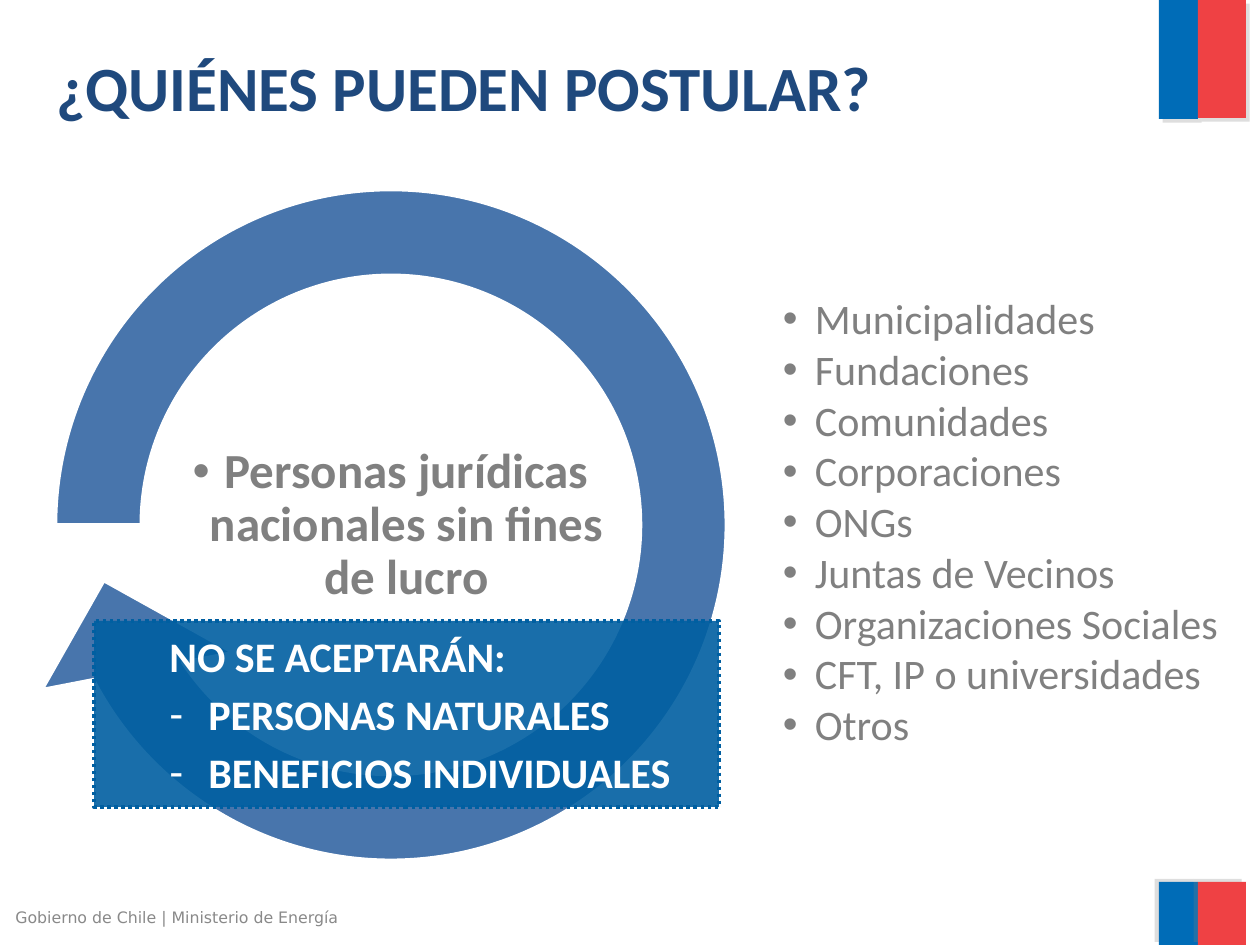
from dataclasses import dataclass

from lxml.etree import SubElement
from pptx import Presentation
from pptx.dml.color import RGBColor
from pptx.enum.dml import MSO_LINE
from pptx.enum.shapes import MSO_SHAPE
from pptx.enum.text import MSO_ANCHOR, PP_ALIGN
from pptx.oxml.ns import qn
from pptx.util import Emu, Pt

PX_PER_INCH = 126
BLUE, RED, NAVY = "006CB7", "EF4144", "1F497D"
RING_BLUE, NOTICE_BLUE = "4875AC", "005FA1"
GRAY, FOOTER_GRAY, SHADOW_GRAY, WHITE = "808080", "898989", "808080", "FFFFFF"


@dataclass(frozen=True)
class Box:
    left: int
    top: int
    width: int
    height: int


@dataclass(frozen=True)
class FlagBar:
    box: Box
    color: str
    shadow_angle: int


@dataclass(frozen=True)
class TextStyle:
    size: float
    color: str
    bold: bool = False
    font: str = "Calibri"
    align: PP_ALIGN = PP_ALIGN.LEFT
    line_spacing: float = 1.0
    before: float = 0
    after: float = 0


@dataclass(frozen=True)
class Line:
    text: str
    bullet: str = ""
    margin: int = 0
    indent: int = 0


FLAG_BARS = [
    FlagBar(Box(1159, -1, 39, 120), BLUE, 45),
    FlagBar(Box(1198, 0, 48, 118), RED, 45),
    FlagBar(Box(1159, 882, 39, 63), BLUE, 215),
    FlagBar(Box(1198, 882, 48, 63), RED, 215),
]
APPLICANTS = [
    "Municipalidades", "Fundaciones", "Comunidades", "Corporaciones", "ONGs",
    "Juntas de Vecinos", "Organizaciones Sociales", "CFT, IP o universidades",
    "Otros",
]
EXCLUDED = ["PERSONAS NATURALES", "BENEFICIOS INDIVIDUALES"]


def px(value: int) -> Emu:
    return Emu(round(value * 914400 / PX_PER_INCH))


def rgb(color: str) -> RGBColor:
    return RGBColor.from_string(color)


def place(box: Box) -> tuple[Emu, Emu, Emu, Emu]:
    return px(box.left), px(box.top), px(box.width), px(box.height)


def add_filled_shape(slide, preset: MSO_SHAPE, box: Box, fill: str):
    """Add a shape with a plain fill, no outline and no shadow."""
    shape = slide.shapes.add_shape(preset, *place(box))
    shape.shadow.inherit = False
    shape.fill.solid()
    shape.fill.fore_color.rgb = rgb(fill)
    shape.line.fill.background()
    return shape


def set_outline(shape, color: str) -> None:
    shape.line.color.rgb = rgb(color)
    shape.line.width = Pt(2)


def add_alpha(color_element, percent: int) -> None:
    SubElement(color_element, qn("a:alpha"), val=str(percent * 1000))


def add_flag_bar(slide, bar: FlagBar) -> None:
    shape = add_filled_shape(slide, MSO_SHAPE.RECTANGLE, bar.box, bar.color)
    effects = shape._element.spPr.find(qn("a:effectLst"))
    shadow = SubElement(effects, qn("a:outerShdw"), blurRad="0", dist=str(Pt(3)),
                        dir=str(bar.shadow_angle * 60000), algn="ctr", rotWithShape="0")
    add_alpha(SubElement(shadow, qn("a:srgbClr"), val=SHADOW_GRAY), 25)


def write_lines(shape, lines: list[Line], style: TextStyle, inset: int | None = None) -> None:
    frame = shape.text_frame
    frame.word_wrap = True
    frame.vertical_anchor = MSO_ANCHOR.MIDDLE
    if inset is not None:
        frame.margin_left = frame.margin_right = px(inset)
        frame.margin_top = frame.margin_bottom = px(inset)
    for index, line in enumerate(lines):
        paragraph = frame.add_paragraph() if index else frame.paragraphs[0]
        paragraph.text = line.text
        paragraph.alignment = style.align
        paragraph.line_spacing = style.line_spacing
        paragraph.space_before = Pt(style.before)
        paragraph.space_after = Pt(style.after)
        properties = paragraph._p.get_or_add_pPr()
        properties.set("marL", str(px(line.margin)))
        properties.set("indent", str(px(line.indent)))
        if line.bullet:
            SubElement(properties, qn("a:buFont"), typeface="Arial")
            SubElement(properties, qn("a:buChar"), char=line.bullet)
        font = paragraph.font
        font.name = style.font
        font.size = Pt(style.size)
        font.bold = style.bold
        font.color.rgb = rgb(style.color)


def add_text(slide, box: Box, lines: list[Line], style: TextStyle,
             inset: int | None = None) -> None:
    write_lines(slide.shapes.add_textbox(*place(box)), lines, style, inset)


def add_ring_arrow(slide) -> None:
    ring = add_filled_shape(slide, MSO_SHAPE.CIRCULAR_ARROW, Box(1, 135, 780, 780), RING_BLUE)
    for index, value in enumerate([0.11, 11.42, 90, 108, 0.125]):
        ring.adjustments[index] = value
    set_outline(ring, WHITE)


def add_exclusion_notice(slide) -> None:
    notice = add_filled_shape(slide, MSO_SHAPE.RECTANGLE, Box(94, 621, 625, 186), NOTICE_BLUE)
    add_alpha(notice._element.spPr.find(qn("a:solidFill")).find(qn("a:srgbClr")), 90)
    set_outline(notice, NOTICE_BLUE)
    notice.line.dash_style = MSO_LINE.ROUND_DOT
    lines = [Line("NO SE ACEPTARÁN:", margin=63)]
    lines += [Line(text, "-", 102, -39) for text in EXCLUDED]
    write_lines(notice, lines, TextStyle(24, WHITE, bold=True, before=4.4))


def main() -> None:
    presentation = Presentation()
    presentation.slide_width, presentation.slide_height = px(1260), px(945)
    slide = presentation.slides.add_slide(presentation.slide_layouts[6])

    for bar in FLAG_BARS:
        add_flag_bar(slide, bar)
    add_text(slide, Box(3, 900, 399, 34), [Line("Gobierno de Chile | Ministerio de Energía")],
             TextStyle(9, FOOTER_GRAY, font="DejaVu Sans"))
    add_text(slide, Box(44, 8, 1125, 157), [Line("¿QUIÉNES PUEDEN POSTULAR?")],
             TextStyle(36, NAVY, bold=True))
    add_ring_arrow(slide)
    add_text(slide, Box(781, 368, 467, 312),
             [Line(text, "•", 32, -32) for text in APPLICANTS],
             TextStyle(24, GRAY, line_spacing=0.9, after=3.1), inset=2)
    add_text(slide, Box(173, 417, 435, 218),
             [Line("Personas jurídicas nacionales sin fines de lucro", "•", 32, -32)],
             TextStyle(28, GRAY, bold=True, align=PP_ALIGN.CENTER, line_spacing=0.9), inset=2)
    add_exclusion_notice(slide)
    presentation.save("out.pptx")


if __name__ == "__main__":
    main()
